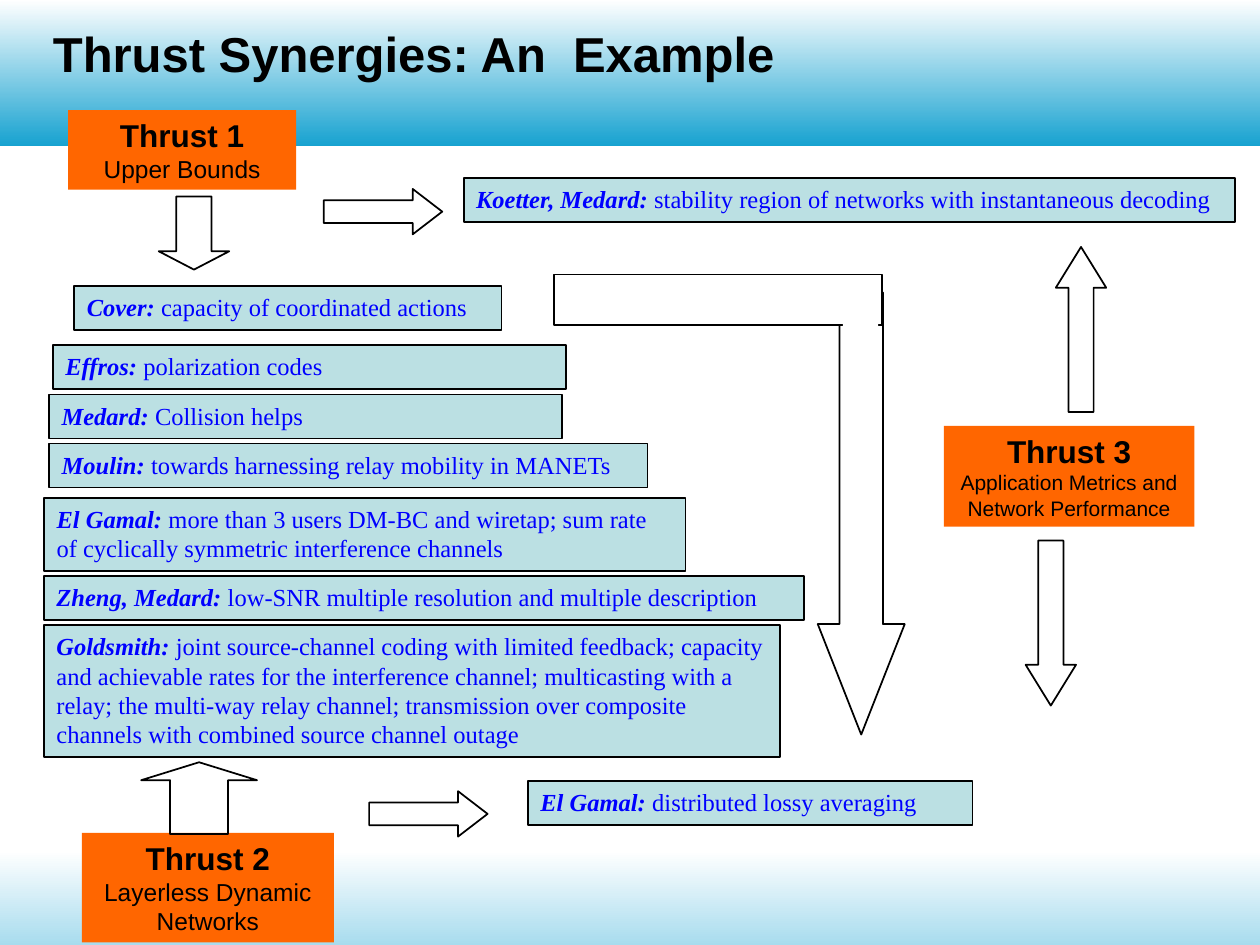
from dataclasses import dataclass

from pptx import Presentation
from pptx import util as u
from pptx.dml.color import RGBColor
from pptx.enum import shapes, text

COLS, ROWS = 100, 75  # the slide's grid; every box is (column, row, columns, rows)
SHAPE = shapes.MSO_SHAPE


@dataclass(frozen=True)
class Theme:
    black: str = "000000"
    white: str = "FFFFFF"
    thrust: str = "FF6600"
    result: str = "BBE0E3"
    result_text: str = "0000FF"
    header: str = "17A2D0"
    footer: str = "A8DCEE"
    sans: str = "Arial"
    serif: str = "Times New Roman"
    title_size: int = 28
    thrust_size: int = 18
    body_size: int = 14
    small_size: int = 12
    line: int = 1


T = Theme()

TITLE = "Thrust Synergies: An  Example"
TITLE_BOX = (4.2, 1.7, 90.4, 5.7)

BANDS = [((0, 0, COLS, 11.6), T.header), ((0, 67.5, COLS, 7.5), T.footer)]

THRUSTS = [
    ("Thrust 1", "Upper Bounds", T.body_size, (5.4, 8.75, 18.1, 6.3)),
    ("Thrust 2", "Layerless Dynamic Networks", T.body_size, (6.5, 66.1, 20, 8.7)),
    ("Thrust 3", "Application Metrics and Network Performance", T.small_size,
     (74.9, 33.8, 19.9, 8)),
]

ONE_LINE, TWO_LINES, FOUR_LINES = 3.5, 5.8, 10.5
RESULTS = [
    ("Koetter, Medard: ", "stability region of networks with instantaneous decoding",
     (36.8, 14.1, 61.2, ONE_LINE)),
    ("Cover: ", "capacity of coordinated actions", (5.9, 22.7, 33.9, ONE_LINE)),
    ("Effros: ", "polarization codes", (4.2, 27.4, 40.7, ONE_LINE)),
    ("Medard: ", "Collision helps", (3.9, 31.3, 40.7, ONE_LINE)),
    ("Moulin: ", "towards harnessing relay mobility in MANETs",
     (3.9, 35.2, 47.5, ONE_LINE)),
    ("El Gamal: ", "more than 3 users DM-BC and wiretap; sum rate of cyclically "
     "symmetric interference channels", (3.5, 39.5, 50.9, TWO_LINES)),
    ("Zheng, Medard: ", "low-SNR multiple resolution and multiple description",
     (3.5, 45.7, 60.3, ONE_LINE)),
    ("Goldsmith: ", "joint source-channel coding with limited feedback; capacity and "
     "achievable rates for the interference channel; multicasting with a relay; the "
     "multi-way relay channel; transmission over composite channels with combined "
     "source channel outage", (3.5, 49.6, 58.4, FOUR_LINES)),
    ("El Gamal: ", "distributed lossy averaging", (41.9, 62, 35.3, ONE_LINE)),
]

# kind, head length as a share of the arrow's thickness, box
ARROWS = [
    (SHAPE.DOWN_ARROW, 0.26, (12.6, 15.6, 5.6, 5.8)),
    (SHAPE.UP_ARROW, 0.25, (11.2, 60.5, 9.2, 5.7)),
    (SHAPE.RIGHT_ARROW, 0.65, (25.7, 15, 9.4, 3.6)),
    (SHAPE.RIGHT_ARROW, 0.65, (29.3, 62.8, 9.4, 3.6)),
    (SHAPE.UP_ARROW, 0.81, (83.8, 19.6, 4, 13.1)),
    (SHAPE.DOWN_ARROW, 0.81, (81.4, 42.9, 4, 13.1)),
    (SHAPE.DOWN_ARROW, 1.27, (64.9, 23.2, 6.9, 35.1)),
]
ELBOW_BAR = (44, 21.8, 26, 4)
ELBOW_JOINT = (66.9, 24.6, 2.8, 3.8)


def rgb(value):
    return RGBColor.from_string(value)


def place(box):
    """Turn grid columns and rows into slide lengths."""
    units = (prs.slide_width / COLS, prs.slide_height / ROWS) * 2
    return [u.Emu(round(n * unit)) for n, unit in zip(box, units)]


def add_shape(box, kind=SHAPE.RECTANGLE, fill=None, outlined=False):
    sp = s.shapes.add_shape(kind, *place(box))
    sp.shadow.inherit = False
    if fill:
        sp.fill.solid()
        sp.fill.fore_color.rgb = rgb(fill)
    else:
        sp.fill.background()
    if outlined:
        sp.line.color.rgb = rgb(T.black)
        sp.line.width = u.Pt(T.line)
    else:
        sp.line.fill.background()
    return sp


def add_run(p, words, color, **font):
    r = p.add_run()
    r.text = words
    for name, value in font.items():
        setattr(r.font, name, value)
    r.font.color.rgb = rgb(color)


def set_frame(sp):
    tf = sp.text_frame
    tf.word_wrap = True
    tf.auto_size = text.MSO_AUTO_SIZE.SHAPE_TO_FIT_TEXT
    tf.vertical_anchor = text.MSO_ANCHOR.TOP
    return tf


def add_bands():
    """Draw the shaded bands, fading up to white, behind everything else."""
    for box, color in BANDS:
        sp = add_shape(box)
        sp.fill.gradient()
        sp.fill.gradient_angle = 270
        for stop, value in zip(sp.fill.gradient_stops, (T.white, color)):
            stop.color.rgb = rgb(value)
        s.shapes._spTree.insert(2, sp._element)


def add_title():
    sp = s.shapes.title
    sp.left, sp.top, sp.width, sp.height = place(TITLE_BOX)
    tf = sp.text_frame
    margins = dict.fromkeys(
        ("margin_left", "margin_top", "margin_right", "margin_bottom"), 0)
    for name, value in margins.items():
        setattr(tf, name, value)
    tf.vertical_anchor = text.MSO_ANCHOR.MIDDLE
    p = tf.paragraphs[0]
    p.alignment = text.PP_ALIGN.LEFT
    p.line_spacing = 0.85
    add_run(p, TITLE, T.black, name=T.sans, size=u.Pt(T.title_size), bold=True)


def add_thrust(name, topic, topic_size, box):
    tf = set_frame(add_shape(box, fill=T.thrust))
    lines = [(name, T.thrust_size, True), (topic, topic_size, False)]
    for i, (words, size, bold) in enumerate(lines):
        p = tf.add_paragraph() if i else tf.paragraphs[0]
        p.alignment = text.PP_ALIGN.CENTER
        add_run(p, words, T.black, name=T.sans, size=u.Pt(size), bold=bold)


def add_result(authors, finding, box):
    p = set_frame(add_shape(box, fill=T.result, outlined=True)).paragraphs[0]
    p.alignment = text.PP_ALIGN.LEFT
    for words, strong in ((authors, True), (finding, False)):
        add_run(p, words, T.result_text, name=T.serif, size=u.Pt(T.body_size),
                bold=strong, italic=strong)


def add_arrow(kind, head, box):
    sp = add_shape(box, kind, outlined=True)
    sp.adjustments[0] = 0.5
    sp.adjustments[1] = head


prs = Presentation()
prs.slide_width, prs.slide_height = u.Inches(10), u.Inches(7.5)
s = prs.slides.add_slide(prs.slide_layouts.get_by_name("Title Only"))

add_bands()
add_title()
for thrust in THRUSTS:
    add_thrust(*thrust)
for result in RESULTS:
    add_result(*result)
for arrow in ARROWS:
    add_arrow(*arrow)
add_shape(ELBOW_BAR, fill=T.white, outlined=True)
add_shape(ELBOW_JOINT, fill=T.white)

prs.save("out.pptx")
